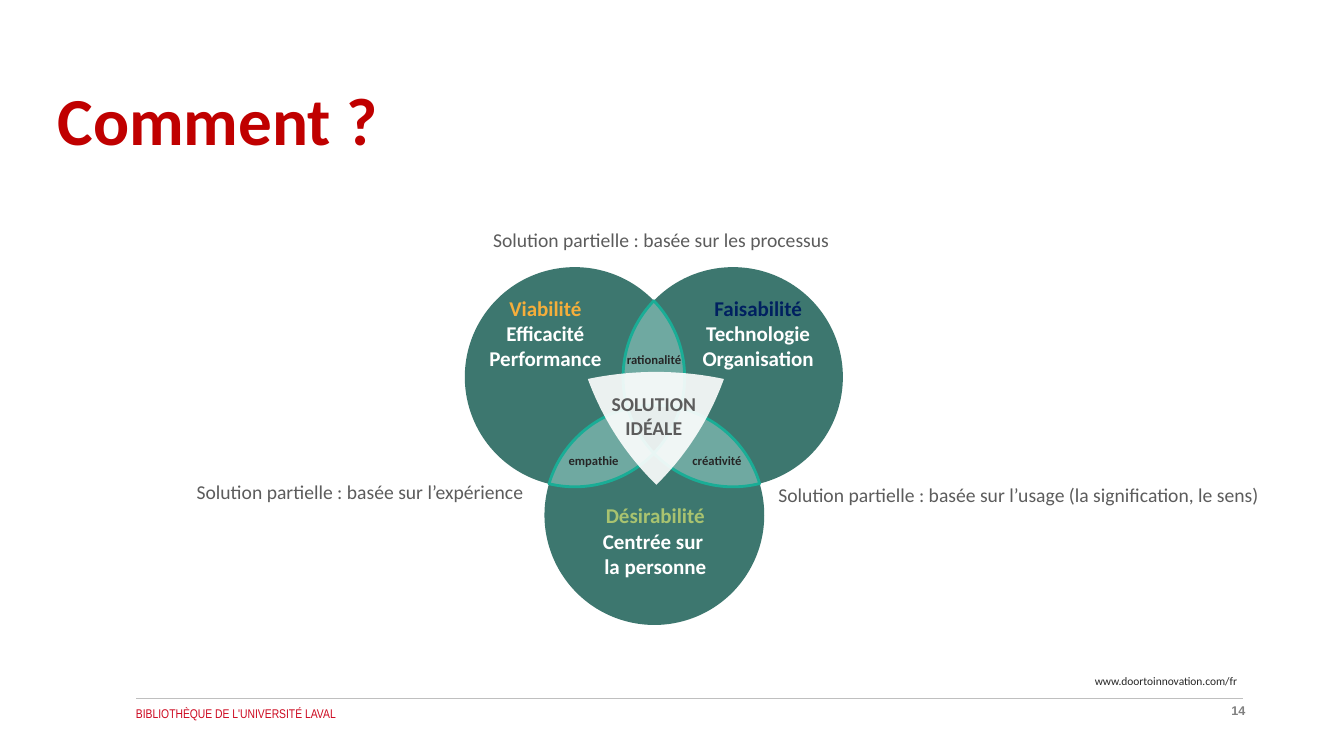
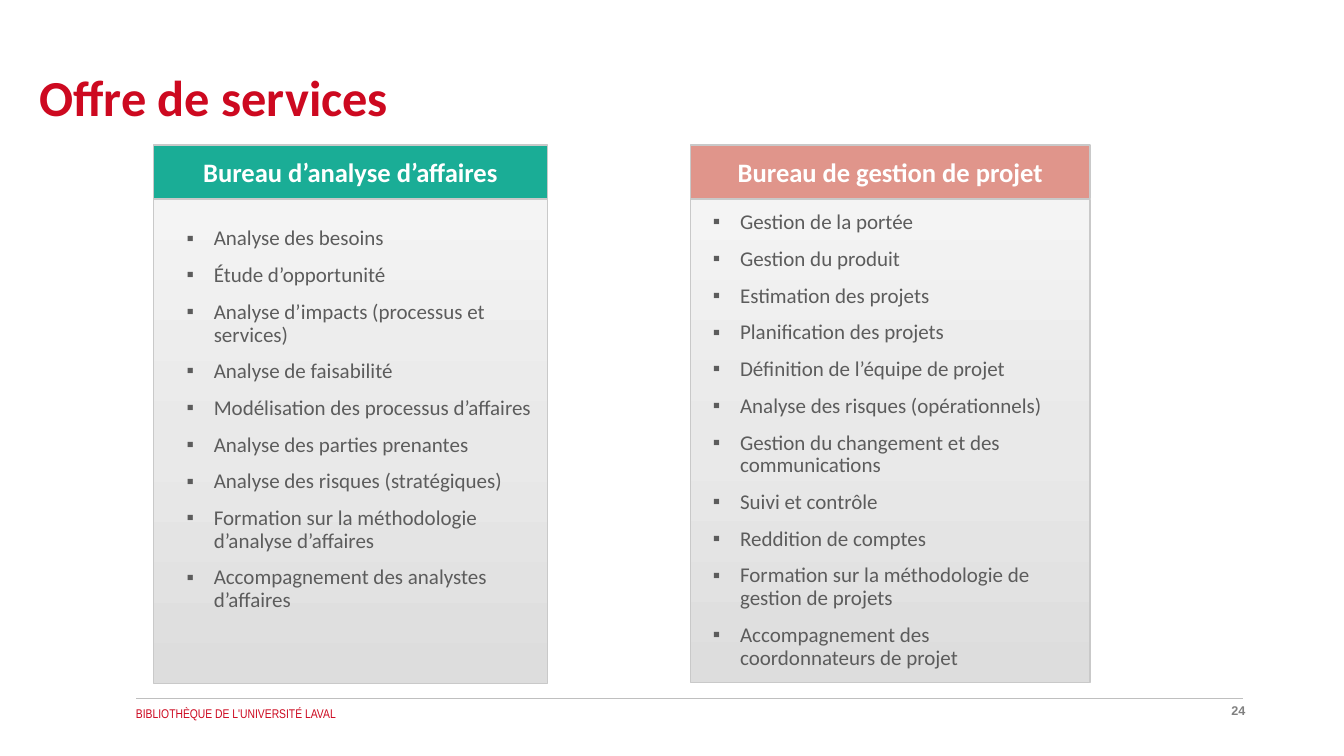
from copy import deepcopy
from math import atan2, cos, dist, hypot, pi, remainder, sin, tan

from lxml.etree import SubElement
from pptx import Presentation
from pptx.dml.color import RGBColor
from pptx.enum.shapes import MSO_CONNECTOR, MSO_SHAPE
from pptx.enum.text import MSO_ANCHOR, MSO_AUTO_SIZE, PP_ALIGN
from pptx.oxml.ns import qn
from pptx.util import Inches, Pt

RED = "CD0920"
DARK_RED = "C00000"
GREEN = "0D564B"
TEAL = "1AAD96"
MINT = "C9F7F0"
SALMON = "E0958B"
WHITE = "FFFFFF"
GREY = "5C5C5C"
INK = "262626"
BORDER = "C9C9C9"
PADDING = (0.1, 0.05, 0.1, 0.05)
NO_PADDING = (0, 0, 0, 0)


def rgb(color):
    return RGBColor.from_string(color)


def place(sp, box):
    sp.left, sp.top, sp.width, sp.height = [Inches(v) for v in box]


def setup(tf, padding=NO_PADDING, anchor=MSO_ANCHOR.TOP, wrap=True):
    tf.auto_size = MSO_AUTO_SIZE.NONE
    tf.word_wrap = wrap
    tf.vertical_anchor = anchor
    left, top, right, bottom = [Inches(v) for v in padding]
    tf.margin_left, tf.margin_top = left, top
    tf.margin_right, tf.margin_bottom = right, bottom


def write(tf, lines, size, colors, bold=False, align=PP_ALIGN.LEFT, font="Calibri"):
    tf.text = "\n".join(lines)
    for i, p in enumerate(tf.paragraphs):
        p.alignment = align
        for r in p.runs:
            r.font.size = Pt(size)
            r.font.name = font
            r.font.bold = bold
            r.font.color.rgb = rgb(colors[min(i, len(colors) - 1)])


def add_text(s, box, lines, size, colors, padding=NO_PADDING,
             anchor=MSO_ANCHOR.TOP, wrap=True, **style):
    tf = s.shapes.add_textbox(*[Inches(v) for v in box]).text_frame
    setup(tf, padding, anchor, wrap)
    write(tf, lines, size, colors, **style)
    return tf


def add_preset(s, preset, box):
    sp = s.shapes.add_shape(preset, *[Inches(v) for v in box])
    sp.shadow.inherit = False
    return sp


def paint(sp, color, alpha=100, line=None, width=1):
    sp.shadow.inherit = False
    sp.fill.solid()
    sp.fill.fore_color.rgb = rgb(color)
    if alpha < 100:
        clr = sp._element.spPr.find(qn("a:solidFill"))[0]
        SubElement(clr, qn("a:alpha")).set("val", str(alpha * 1000))
    outline(sp, line, width)


def outline(sp, line, width=1):
    if line:
        sp.line.color.rgb = rgb(line)
        sp.line.width = Pt(width)
    else:
        sp.line.fill.background()


def shade(sp, colors):
    sp.fill.gradient()
    sp.fill.gradient_angle = 90
    stops = sp._element.spPr.find(qn("a:gradFill")).find(qn("a:gsLst"))
    stops.insert(1, deepcopy(stops[0]))
    for i, (stop, color) in enumerate(zip(sp.fill.gradient_stops, colors)):
        stop.position = i / (len(colors) - 1)
        stop.color.rgb = rgb(color)


def add_title(s, box, text, size, color):
    sp = s.shapes.title
    place(sp, box)
    setup(sp.text_frame, anchor=MSO_ANCHOR.MIDDLE)
    write(sp.text_frame, [text], size, [color], bold=True)


def add_footer(s, number):
    add_text(s, (1.25, 6.95, 8.05, 0.25), ["BIBLIOTHÈQUE DE L'UNIVERSITÉ LAVAL"],
             9, [RED], PADDING, font="Arial Narrow")
    rule = s.shapes.add_connector(MSO_CONNECTOR.STRAIGHT, Inches(1.35), Inches(6.93),
                                  Inches(12.33), Inches(6.93))
    outline(rule, "BFBFBF", 0.25)
    SubElement(rule._element.spPr, qn("a:effectLst"))
    add_text(s, (11.06, 6.92, 1.39, 0.25), [str(number)], 9, ["808080"], PADDING,
             bold=True, align=PP_ALIGN.RIGHT, font="Arial")


def crossings(a, b, radius):
    mx, my = (a[0] + b[0]) / 2, (a[1] + b[1]) / 2
    d = dist(a, b)
    h = (radius ** 2 - d ** 2 / 4) ** 0.5
    dx, dy = (b[1] - a[1]) * h / d, (a[0] - b[0]) * h / d
    return [(mx + dx, my + dy), (mx - dx, my - dy)]


def arc(center, start, end):
    radius = dist(center, start)
    first, last = [atan2(p[1] - center[1], p[0] - center[0]) for p in (start, end)]
    pull = radius * 4 / 3 * tan(remainder(last - first, 2 * pi) / 4)
    return [(start[0] - pull * sin(first), start[1] + pull * cos(first)),
            (end[0] + pull * sin(last), end[1] - pull * cos(last)), end]


def bulge(start, end, depth):
    dx, dy = end[0] - start[0], end[1] - start[1]
    rise = 4 / 3 * depth / hypot(dx, dy)
    handles = [(start[0] + dx * t + dy * rise, start[1] + dy * t - dx * rise)
               for t in (1 / 3, 2 / 3)]
    return handles + [end]


def add_curve(s, points):
    points = [(Inches(x), Inches(y)) for x, y in points]
    builder = s.shapes.build_freeform(*points[-1])
    builder.add_line_segments(points, close=True)
    sp = builder.convert_to_shape()
    lines = list(sp._element.iter(qn("a:lnTo")))
    for first, second, third in zip(lines[::3], lines[1::3], lines[2::3]):
        first.tag = qn("a:cubicBezTo")
        for line in (second, third):
            first.append(line[0])
            line.getparent().remove(line)
    return sp


def overlap(a, b, other, radius):
    tip = max(crossings(a, b, radius), key=lambda p: dist(p, other))
    near_a = min(crossings(a, other, radius), key=lambda p: dist(p, b))
    near_b = min(crossings(b, other, radius), key=lambda p: dist(p, a))
    return arc(a, tip, near_a) + arc(other, near_a, near_b) + arc(b, near_b, tip)


def add_venn(s, x, y):
    radius = 1.09
    viable = (x + 1.09, y + 1.08)
    feasible = (x + 2.66, y + 1.08)
    desirable = (x + 1.88, y + 2.45)
    for cx, cy in (desirable, viable, feasible):
        box = (cx - radius, cy - radius, 2 * radius, 2 * radius)
        paint(add_preset(s, MSO_SHAPE.OVAL, box), GREEN, 80)
    for trio in ((feasible, desirable, viable), (viable, desirable, feasible),
                 (viable, feasible, desirable)):
        paint(add_curve(s, overlap(*trio, radius)), MINT, 50, TEAL, 2)

    corners = [(x + 1.22, y + 1.1), (x + 2.57, y + 1.1), (x + 1.9, y + 2.15)]
    sides = zip(corners, corners[1:] + corners[:1])
    core = [p for start, end in sides for p in bulge(start, end, 0.07)]
    paint(add_curve(s, core), WHITE, 90)

    add_text(s, (x + 1.42, y + 1.23, 0.91, 0.47), ["SOLUTION", "IDÉALE"], 14, [GREY],
             bold=True, align=PP_ALIGN.CENTER)
    for box, padding, lines, accent in (
            ((x + 1.24, y + 2.28, 1.3, 0.86), PADDING,
             ["Désirabilité", "Centrée sur \vla personne"], "A9C370"),
            ((x + 2.26, y + 0.27, 1.3, 0.76), NO_PADDING,
             ["Faisabilité", "Technologie", "Organisation"], "002060"),
            ((x + 0.2, y + 0.27, 1.2, 0.76), NO_PADDING,
             ["Viabilité", "Efficacité", "Performance"], "F5AE3B")):
        add_text(s, box, lines, 15, [accent, WHITE], padding, bold=True,
                 align=PP_ALIGN.CENTER)
    for dx, dy, width, word in ((0.93, 1.78, 0.71, "empathie"),
                                (2.16, 1.78, 0.7, "créativité"),
                                (1.51, 0.78, 0.76, "rationalité")):
        add_text(s, (x + dx, y + dy, width, 0.25), [word], 9, [INK], PADDING,
                 wrap=False, bold=True)


def add_caption(s, box, ending):
    tf = add_text(s, box, ["Solution partielle : basée sur " + ending], 14, [GREY])
    tf.paragraphs[0].line_spacing = 0.9
    tf.paragraphs[0].space_after = Pt(10)


def how_slide(prs):
    s = prs.slides.add_slide(prs.slide_layouts[5])
    add_title(s, (0.57, 0.82, 9.15, 0.72), "Comment ?", 48, DARK_RED)
    add_venn(s, 4.61, 2.66)
    add_caption(s, (1.95, 4.79, 3.31, 0.21), "l’expérience")
    add_caption(s, (7.72, 4.82, 5.21, 0.21), "l’usage (la signification, le sens)")
    add_caption(s, (4.89, 2.29, 3.8, 0.21), "les processus")
    add_text(s, (10.76, 6.64, 1.66, 0.24), ["www.doortoinnovation.com/fr"], 8.2, [INK],
             PADDING, wrap=False)
    add_footer(s, 14)


def add_bullets(tf, items):
    write(tf, items, 15, [GREY])
    for p in tf.paragraphs:
        pPr = p._p.get_or_add_pPr()
        pPr.set("marL", str(Inches(0.27)))
        pPr.set("indent", str(-Inches(0.27)))
        SubElement(pPr, qn("a:buFont")).set("typeface", "Arial")
        SubElement(pPr, qn("a:buChar")).set("char", "▪")
        p.line_spacing = 0.9
        p.space_before = Pt(0)
        p.space_after = Pt(10)


def add_office(s, body, box, heading, color, list_box, items):
    x, y, w, h = box
    panel = add_preset(s, MSO_SHAPE.RECTANGLE, (x, y + 0.54, w, h - 0.54))
    shade(panel, ("DDDDDD", "E9E9E9", "F4F4F4"))
    outline(panel, BORDER)
    header = add_preset(s, MSO_SHAPE.RECTANGLE, (x, y, w, 0.53))
    paint(header, color, line=BORDER)
    setup(header.text_frame, PADDING, MSO_ANCHOR.MIDDLE)
    write(header.text_frame, [heading], 19, [WHITE], bold=True, align=PP_ALIGN.CENTER)

    dx, dy, list_width, list_height = list_box
    place(body, (x + dx, y + dy, list_width, list_height))
    setup(body.text_frame)
    add_bullets(body.text_frame, items)
    header._element.addnext(body._element)


def services_slide(prs):
    s = prs.slides.add_slide(prs.slide_layouts[3])
    add_title(s, (0.39, 0.6, 12.2, 0.72), "Offre de services", 36, RED)
    left, right = s.placeholders[1], s.placeholders[2]
    add_office(s, left, (1.52, 1.44, 3.91, 5.34),
               "Bureau d’analyse d’affaires", TEAL, (0.33, 0.82, 3.58, 3.85), [
                   "Analyse des besoins",
                   "Étude d’opportunité",
                   "Analyse d’impacts (processus et services)",
                   "Analyse de faisabilité",
                   "Modélisation des processus d’affaires",
                   "Analyse des parties prenantes",
                   "Analyse des risques (stratégiques)",
                   "Formation sur la méthodologie d’analyse d’affaires",
                   "Accompagnement des analystes d’affaires"])
    add_office(s, right, (6.85, 1.44, 3.96, 5.33),
               "Bureau de gestion de projet", SALMON, (0.22, 0.66, 3.51, 4.97), [
                   "Gestion de la portée",
                   "Gestion du produit",
                   "Estimation des projets",
                   "Planification des projets",
                   "Définition de l’équipe de projet",
                   "Analyse des risques (opérationnels)",
                   "Gestion du changement et des communications",
                   "Suivi et contrôle",
                   "Reddition de comptes",
                   "Formation sur la méthodologie de gestion de projets",
                   "Accompagnement des coordonnateurs de projet"])
    add_footer(s, 24)


def main():
    prs = Presentation()
    prs.slide_width, prs.slide_height = Inches(13.33), Inches(7.5)
    how_slide(prs)
    services_slide(prs)
    prs.save("out.pptx")


if __name__ == "__main__":
    main()
